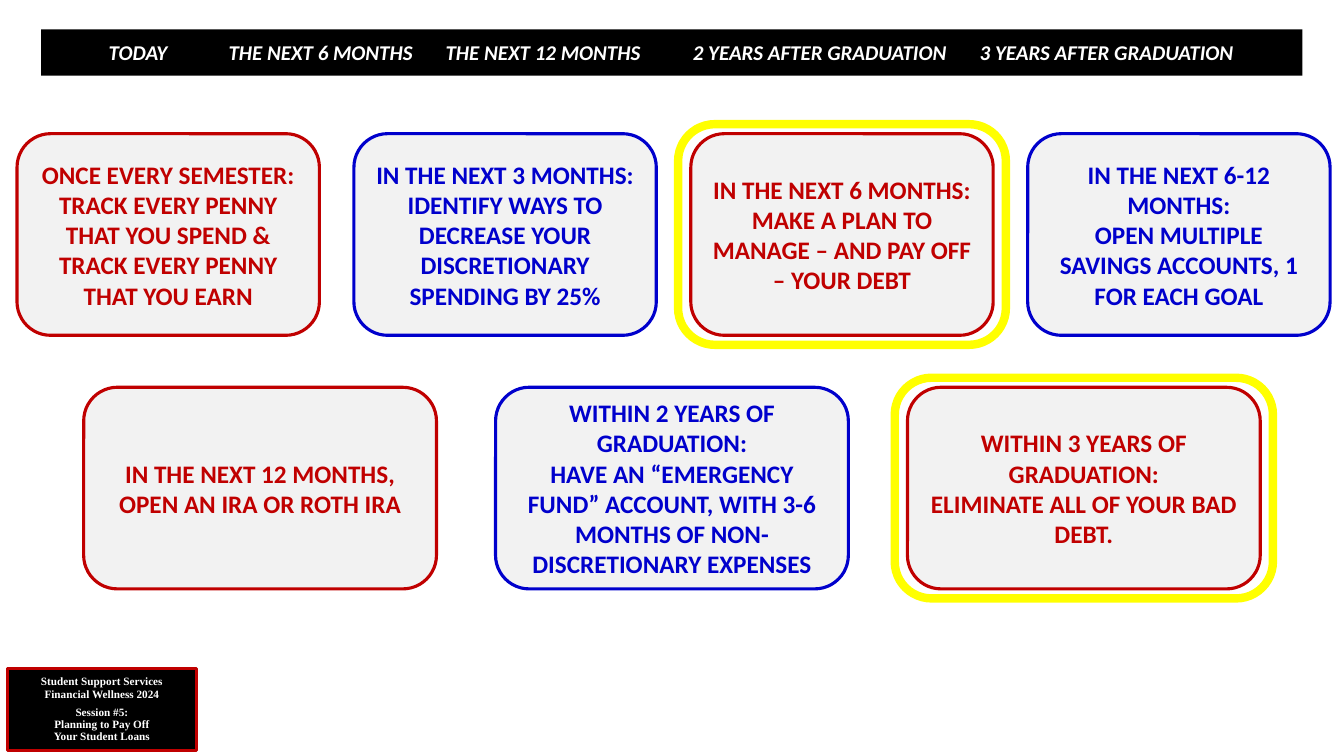
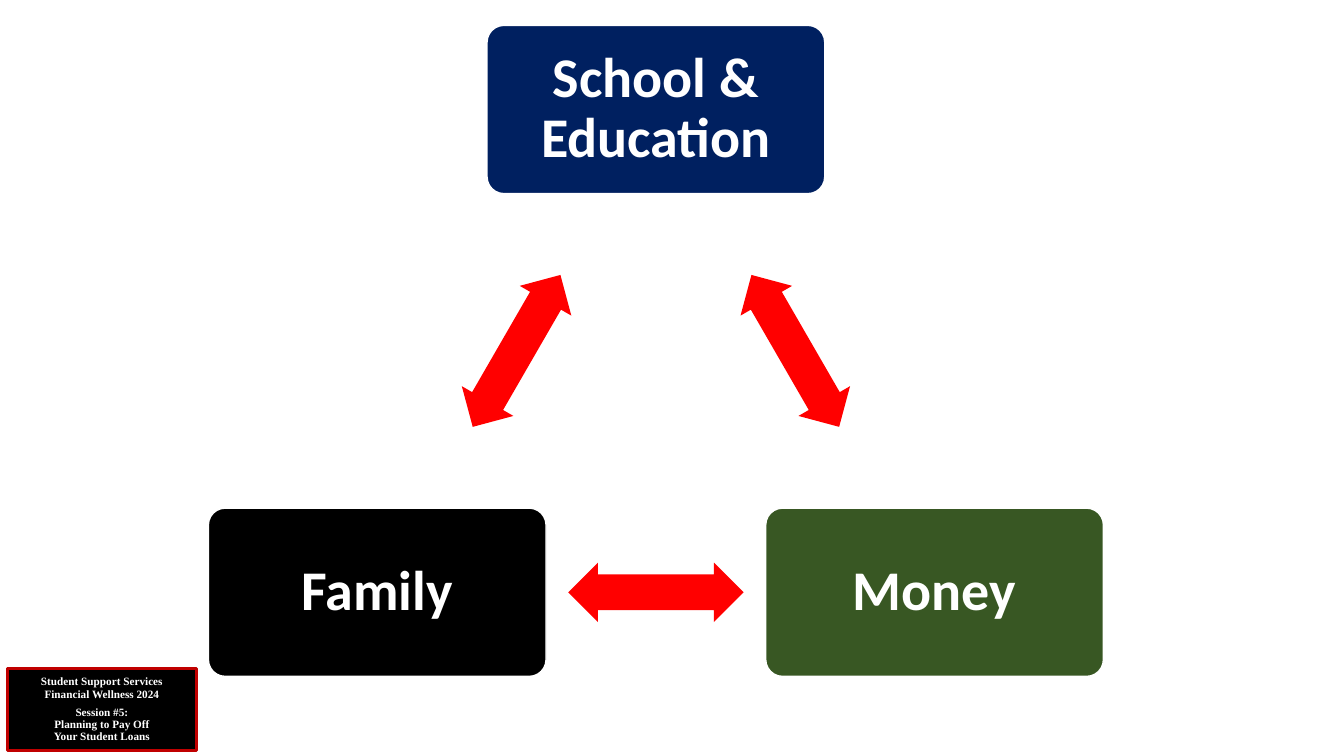
"""Build two financial wellness slides: a timeline of goals and a triangle of priorities."""
import math

from lxml import etree
from pptx import Presentation
from pptx.dml.color import RGBColor
from pptx.enum.shapes import MSO_SHAPE
from pptx.enum.text import MSO_ANCHOR, PP_ALIGN
from pptx.oxml.ns import qn
from pptx.util import Cm, Pt

RECT = MSO_SHAPE.RECTANGLE
ROUNDED = MSO_SHAPE.ROUNDED_RECTANGLE
DOUBLE_ARROW = MSO_SHAPE.LEFT_RIGHT_ARROW
MIDDLE = MSO_ANCHOR.MIDDLE
LEFT, CENTER = PP_ALIGN.LEFT, PP_ALIGN.CENTER

BLACK = RGBColor(0x00, 0x00, 0x00)
WHITE = RGBColor(0xFF, 0xFF, 0xFF)
GREY = RGBColor(0xF2, 0xF2, 0xF2)
CRIMSON = RGBColor(0xC0, 0x00, 0x00)
BLUE = RGBColor(0x00, 0x00, 0xCC)
YELLOW = RGBColor(0xFF, 0xFF, 0x00)
NAVY = RGBColor(0x00, 0x20, 0x60)
GREEN = RGBColor(0x38, 0x57, 0x23)
RED = RGBColor(0xFF, 0x00, 0x00)

SANS, SERIF = "Calibri", "Times New Roman"

FOOTER = ["Student Support Services", "Financial Wellness 2024",
          "Session #5:\vPlanning to Pay Off\vYour Student Loans"]

PERIODS = [("TODAY", 1.45), ("THE NEXT 6 MONTHS", 4.47), ("THE NEXT 12 MONTHS", 9.94),
           ("2 YEARS AFTER GRADUATION", 16.17), ("3 YEARS AFTER GRADUATION", 23.4)]

NEAR_GOALS = [
    (["ONCE EVERY SEMESTER:",
      "TRACK EVERY PENNY THAT YOU SPEND & TRACK EVERY PENNY THAT YOU EARN"], CRIMSON, False),
    (["IN THE NEXT 3 MONTHS:",
      "IDENTIFY WAYS TO DECREASE YOUR DISCRETIONARY SPENDING BY 25%"], BLUE, False),
    (["IN THE NEXT 6 MONTHS:",
      "MAKE A PLAN TO MANAGE – AND PAY OFF – YOUR DEBT"], CRIMSON, True),
    (["IN THE NEXT 6-12 MONTHS:",
      "OPEN MULTIPLE SAVINGS ACCOUNTS, 1 FOR EACH GOAL"], BLUE, False),
]
FAR_GOALS = [
    (["IN THE NEXT 12 MONTHS, OPEN AN IRA OR ROTH IRA"], CRIMSON, False),
    (["WITHIN 2 YEARS OF GRADUATION:",
      "HAVE AN “EMERGENCY FUND” ACCOUNT, WITH 3-6 MONTHS OF NON-DISCRETIONARY EXPENSES"],
     BLUE, False),
    (["WITHIN 3 YEARS OF GRADUATION:", "ELIMINATE ALL OF YOUR BAD DEBT."], CRIMSON, True),
]
CARD_HEIGHT = 5.08
HALO_X, HALO_Y = 0.32, 0.24

PRIORITIES = [("School & Education", NAVY), ("Money", GREEN), ("Family", BLACK)]
TRIANGLE_X, TRIANGLE_Y, TRIANGLE_RADIUS = 16.53, 10.87, 8.11


def add_box(s, kind, x, y, w, h, fill=None, line=None, line_width=2.25):
    """Add a flat preset shape, measured in centimetres."""
    sp = s.shapes.add_shape(kind, Cm(x), Cm(y), Cm(w), Cm(h))
    sp.shadow.inherit = False
    if fill is None:
        sp.fill.background()
    else:
        sp.fill.solid()
        sp.fill.fore_color.rgb = fill
    if line is None:
        sp.line.fill.background()
    else:
        sp.line.color.rgb = line
        sp.line.width = Pt(line_width)
    return sp


def write(sp, lines, size, color=WHITE, font=SANS, italic=False, spacing=1.0):
    """Fill a shape with centred bold paragraphs and return them."""
    tf = sp.text_frame
    tf.word_wrap = True
    tf.vertical_anchor = MIDDLE
    tf.text = "\n".join(lines)
    for p in tf.paragraphs:
        p.alignment = CENTER
        p.line_spacing = spacing
        for r in p.runs:
            r.font.name = font
            r.font.size = Pt(size)
            r.font.bold = True
            r.font.italic = italic
            r.font.color.rgb = color
    return tf.paragraphs


def add_tab_stops(p, positions):
    """Give a paragraph left tab stops, measured in centimetres."""
    tabs = etree.SubElement(p._p.get_or_add_pPr(), qn("a:tabLst"))
    for position in positions:
        etree.SubElement(tabs, qn("a:tab"), pos=str(Cm(position)), algn="l")


def add_slide(prs):
    """Add a blank slide with the session label in its lower left corner."""
    s = prs.slides.add_slide(prs.slide_layouts[6])
    label = add_box(s, RECT, 0.18, 16.84, 4.78, 2.08, BLACK, CRIMSON)
    paragraphs = write(label, FOOTER, 8, font=SERIF, spacing=0.9)
    paragraphs[-1].space_before = Pt(4.4)
    return s


def add_period_band(s):
    """Add the black band that names the periods."""
    band = add_box(s, RECT, 1.04, 0.74, 31.78, 1.17, BLACK)
    text = "".join("\t" + name for name, _ in PERIODS)
    p = write(band, [text], 15, italic=True)[0]
    p.alignment = LEFT
    add_tab_stops(p, [position for _, position in PERIODS])


def add_goal_row(s, goals, x, y, width, step):
    """Add a row of goal cards, with a yellow halo around the debt goals."""
    for i, (lines, color, highlighted) in enumerate(goals):
        left = x + i * step
        card = add_box(s, ROUNDED, left, y, width, CARD_HEIGHT, GREY, color)
        write(card, lines, 18, color)
        if highlighted:
            add_box(s, ROUNDED, left - HALO_X, y - HALO_Y, width + 2 * HALO_X,
                    CARD_HEIGHT + 2 * HALO_Y, line=YELLOW, line_width=6)


def on_circle(radius, degrees):
    """Return the point at an angle around the centre of the triangle."""
    angle = math.radians(degrees)
    return TRIANGLE_X + radius * math.cos(angle), TRIANGLE_Y + radius * math.sin(angle)


def add_priority(s, text, fill, x, y, w=8.51, h=4.24):
    """Add a rounded box centred on a corner of the triangle."""
    box = add_box(s, ROUNDED, x - w / 2, y - h / 2, w, h, fill, WHITE, 1)
    box.adjustments[0] = 0.1
    tf = box.text_frame
    tf.margin_left = tf.margin_right = tf.margin_top = tf.margin_bottom = Cm(0.43)
    write(box, [text], 40, spacing=0.9)


def add_link(s, x, y, rotation, w=4.42, h=1.5):
    """Add a red double arrow centred on a side of the triangle."""
    arrow = add_box(s, DOUBLE_ARROW, x - w / 2, y - h / 2, w, h, RED)
    arrow.adjustments[0] = 0.6
    arrow.adjustments[1] = 0.5
    arrow.rotation = rotation


def build_timeline(prs):
    """Build the slide of goals by period."""
    s = add_slide(prs)
    add_period_band(s)
    add_goal_row(s, NEAR_GOALS, 0.43, 3.37, 7.62, 8.49)
    add_goal_row(s, FAR_GOALS, 2.11, 9.76, 8.89, 10.38)


def build_triangle(prs):
    """Build the slide of three linked priorities."""
    s = add_slide(prs)
    for i, (text, fill) in enumerate(PRIORITIES):
        turn = 120 * i
        add_priority(s, text, fill, *on_circle(TRIANGLE_RADIUS, turn - 90))
        add_link(s, *on_circle(TRIANGLE_RADIUS / 2, turn - 30), rotation=turn + 60)


def main():
    """Build and save the presentation."""
    prs = Presentation()
    prs.slide_width, prs.slide_height = Cm(33.87), Cm(19.05)
    build_timeline(prs)
    build_triangle(prs)
    prs.save("out.pptx")


if __name__ == "__main__":
    main()
